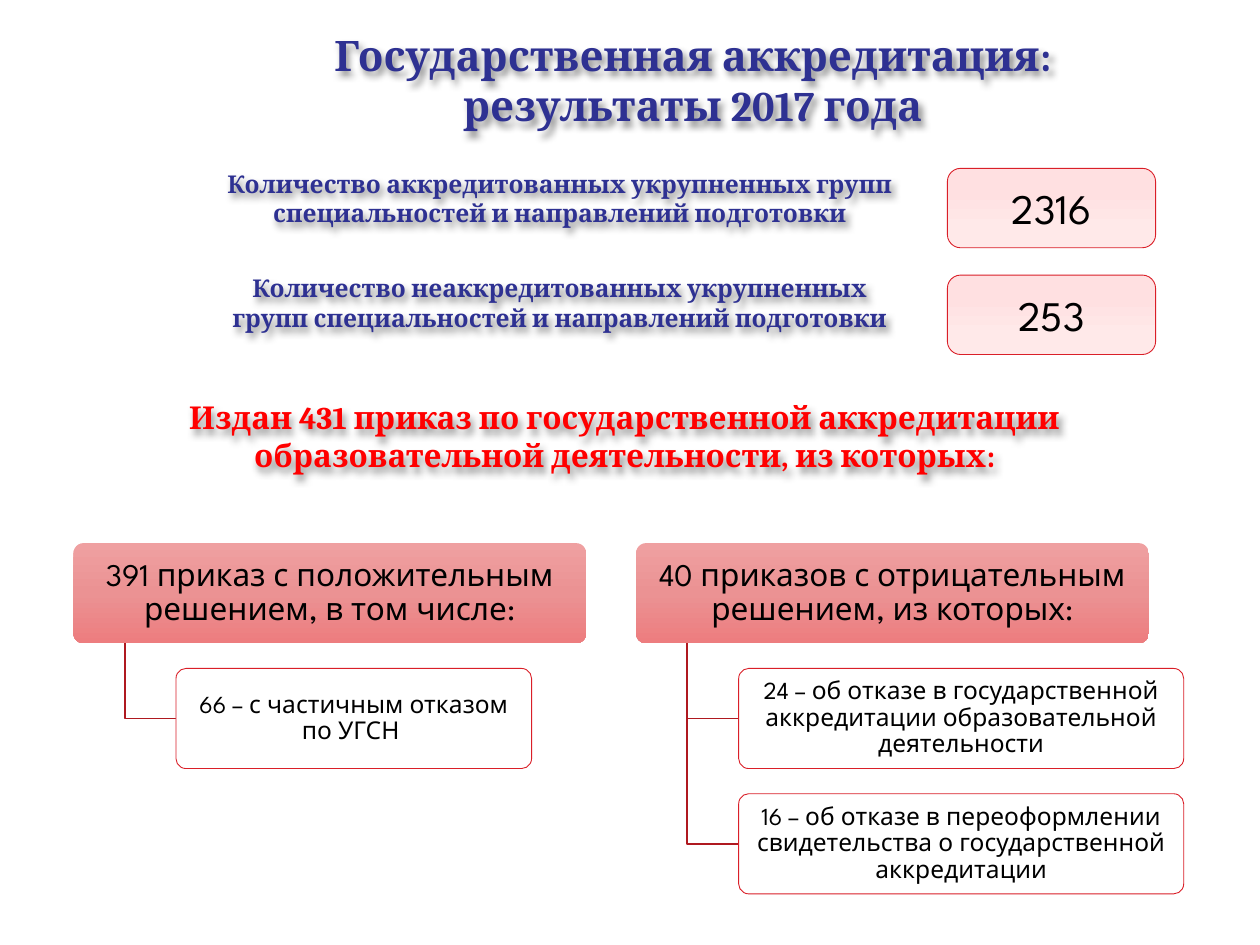
from dataclasses import dataclass

from lxml.etree import SubElement
from pptx import Presentation
from pptx.dml.color import RGBColor
from pptx.enum.shapes import MSO_SHAPE
from pptx.enum.text import MSO_ANCHOR, MSO_AUTO_SIZE, PP_ALIGN
from pptx.oxml import parse_xml
from pptx.oxml.ns import nsdecls, qn
from pptx.util import Pt

HEADING_FONT = "Cambria"
BOX_FONT = "League Spartan"
NAVY, RED, BLACK, WHITE = "2E3192", "FF0000", "000000", "FFFFFF"
BORDER, BRANCH = "DA1F28", "AF1920"
PINK_STOPS = [(25, "FFE9E9"), (72, "FFE0E1")]
ROSE_STOPS = [(0, "EFA0A1"), (50, "EB9293"), (100, "ED7D7F")]

BOX_H = 57.2
ROW_PITCH = 71.6
TREE_TOP = 310.4
HEAD_W = 293


@dataclass
class Heading:
    text: str
    left: float
    top: float
    width: float
    height: float
    size: float
    color: str


@dataclass
class Count:
    text: str
    top: float


@dataclass
class Branch:
    text: str
    left: float
    child_width: float
    children: list[str]


TITLE = Heading("Государственная аккредитация: результаты 2017 года",
                163.4, 13, 465, 65.4, 24, NAVY)
HEADINGS = [
    Heading("Количество аккредитованных укрупненных групп специальностей и направлений подготовки",
            116, 93, 408, 41, 14, NAVY),
    Heading("Количество неаккредитованных укрупненных групп специальностей и направлений подготовки",
            116, 152.6, 408, 41, 14, NAVY),
    Heading("Издан 431 приказ по государственной аккредитации образовательной деятельности, из которых:",
            31, 224, 652, 51, 18, RED),
]
COUNTS = [Count("2316", 96.2), Count("253", 157.2)]
BRANCHES = [
    Branch("391 приказ с положительным решением, в том числе:", 42, 203.2,
           ["66 – с частичным отказом по УГСН "]),
    Branch("40 приказов с отрицательным решением, из которых:", 363.5, 254.3,
           ["24 – об отказе в государственной аккредитации образовательной деятельности",
            "16 – об отказе в переоформлении свидетельства о государственной аккредитации"]),
]


def rgb(color: str) -> RGBColor:
    return RGBColor.from_string(color)


def add_text(sp, text: str, font: str, size: float, color: str,
             bold: bool = False, spacing: float = 1.0) -> None:
    p = sp.text_frame.paragraphs[0]
    p.alignment = PP_ALIGN.CENTER
    p.line_spacing = spacing
    r = p.add_run()
    r.text = text
    r.font.name = font
    r.font.size = Pt(size)
    r.font.bold = bold
    r.font.color.rgb = rgb(color)


def set_insets(sp, x: float, y: float) -> None:
    tf = sp.text_frame
    tf.margin_left = tf.margin_right = Pt(x)
    tf.margin_top = tf.margin_bottom = Pt(y)


def fill_gradient(sp, stops: list[tuple[int, str]], angle: float) -> None:
    sp.fill.gradient()
    sp.fill.gradient_angle = angle
    gs_list = sp._element.spPr.find(qn("a:gradFill")).find(qn("a:gsLst"))
    for gs in list(gs_list):
        gs_list.remove(gs)
    for position, color in stops:
        gs = SubElement(gs_list, qn("a:gs"), pos=str(position * 1000))
        SubElement(gs, qn("a:srgbClr"), val=color)


def format_heading(sp, heading: Heading) -> None:
    sp.left, sp.top = Pt(heading.left), Pt(heading.top)
    sp.width, sp.height = Pt(heading.width), Pt(heading.height)
    tf = sp.text_frame
    tf.word_wrap = True
    tf.auto_size = MSO_AUTO_SIZE.NONE
    tf.vertical_anchor = MSO_ANCHOR.TOP
    add_text(sp, heading.text, HEADING_FONT, heading.size, heading.color, bold=True)
    sp._element.spPr.append(parse_xml(
        f'<a:effectLst {nsdecls("a")}>'
        f'<a:outerShdw blurRad="{Pt(4)}" dist="{Pt(3)}" dir="3600000" algn="tl" rotWithShape="0">'
        '<a:srgbClr val="000000"><a:alpha val="45000"/></a:srgbClr>'
        '</a:outerShdw></a:effectLst>'))


def add_box(slide, left: float, top: float, width: float, height: float):
    sp = slide.shapes.add_shape(MSO_SHAPE.ROUNDED_RECTANGLE,
                                Pt(left), Pt(top), Pt(width), Pt(height))
    sp.shadow.inherit = False
    sp.line.color.rgb = rgb(BORDER)
    sp.line.width = Pt(0.5)
    sp.text_frame.word_wrap = True
    sp.text_frame.vertical_anchor = MSO_ANCHOR.MIDDLE
    return sp


def add_count(slide, count: Count) -> None:
    sp = add_box(slide, 541.4, count.top, 119, 45.4)
    fill_gradient(sp, PINK_STOPS, 90)
    add_text(sp, count.text, BOX_FONT, 24, BLACK)


def add_elbow(slide, x: float, top: float, right: float, bottom: float) -> None:
    builder = slide.shapes.build_freeform(Pt(x), Pt(top), scale=1.0)
    builder.add_line_segments([(Pt(x), Pt(bottom)), (Pt(right), Pt(bottom))], close=False)
    sp = builder.convert_to_shape()
    sp.shadow.inherit = False
    sp.fill.background()
    sp.line.color.rgb = rgb(BRANCH)
    sp.line.width = Pt(1)


def add_branch(slide, branch: Branch) -> None:
    head = add_box(slide, branch.left, TREE_TOP, HEAD_W, BOX_H)
    head.adjustments[0] = 0.1
    head.line.fill.background()
    fill_gradient(head, ROSE_STOPS, 270)
    set_insets(head, 4.6, 3.8)
    add_text(head, branch.text, BOX_FONT, 18, BLACK, spacing=0.9)

    child_left = branch.left + HEAD_W * 0.2
    for row, text in enumerate(branch.children, start=1):
        top = TREE_TOP + row * ROW_PITCH
        add_elbow(slide, branch.left + HEAD_W * 0.1, TREE_TOP + BOX_H,
                  child_left, top + BOX_H / 2)
        child = add_box(slide, child_left, top, branch.child_width, BOX_H)
        child.adjustments[0] = 0.1
        child.fill.solid()
        child.fill.fore_color.rgb = rgb(WHITE)
        set_insets(child, 3.6, 3)
        add_text(child, text, BOX_FONT, 14, BLACK, spacing=0.9)


def main() -> None:
    prs = Presentation()
    prs.slide_width, prs.slide_height = Pt(720), Pt(540)
    slide = prs.slides.add_slide(prs.slide_layouts[5])
    format_heading(slide.shapes.title, TITLE)
    for heading in HEADINGS:
        format_heading(slide.shapes.add_textbox(0, 0, 0, 0), heading)
    for count in COUNTS:
        add_count(slide, count)
    for branch in BRANCHES:
        add_branch(slide, branch)
    prs.save("out.pptx")


if __name__ == "__main__":
    main()
